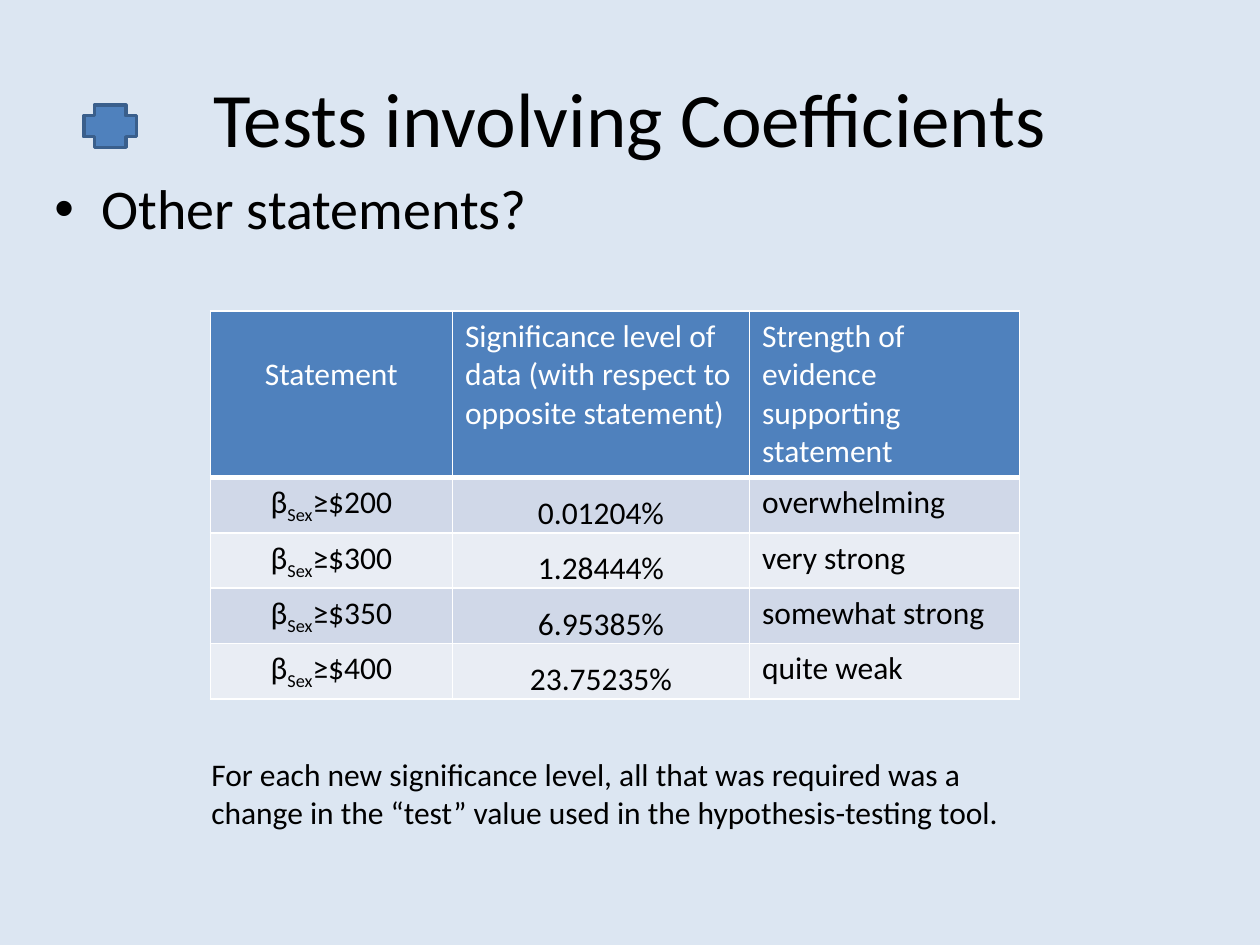
"""Build the slide on tests involving regression coefficients."""
from lxml.etree import SubElement
from pptx import Presentation
from pptx.dml.color import RGBColor
from pptx.enum.shapes import MSO_SHAPE as Shape
from pptx.enum.text import MSO_ANCHOR as Anchor, MSO_AUTO_SIZE as AutoSize, PP_ALIGN as Align
from pptx.oxml.ns import qn
from pptx.util import Cm, Pt

BACKGROUND = RGBColor(0xDC, 0xE6, 0xF2)
BLUE = RGBColor(0x4F, 0x81, 0xBD)
OUTLINE = RGBColor(0x3A, 0x5F, 0x8C)
BANDS = RGBColor(0xD0, 0xD8, 0xE8), RGBColor(0xE9, 0xED, 0xF4)
WHITE = RGBColor(0xFF, 0xFF, 0xFF)
BLACK = RGBColor(0, 0, 0)

HEADINGS = (
    "Statement",
    "Significance level of data (with respect to opposite statement)",
    "Strength of evidence supporting statement",
)
FINDINGS = (
    ("≥$200", "0.01204%", "overwhelming"),
    ("≥$300", "1.28444%", "very strong"),
    ("≥$350", "6.95385%", "somewhat strong"),
    ("≥$400", "23.75235%", "quite weak"),
)


def style_text(paragraph, size, color=BLACK, align=None):
    font = paragraph.font
    font.name, font.size, font.bold = "Calibri", Pt(size), False
    font.color.rgb = color
    paragraph.alignment = align


def style_cell(cell, fill, width=1, header_width=1):
    properties = cell._tc.get_or_add_tcPr()
    for side in ("lnL", "lnR", "lnT", "lnB"):
        points = header_width if side == "lnB" else width
        border = SubElement(properties, qn(f"a:{side}"), w=str(Pt(points)))
        SubElement(SubElement(border, qn("a:solidFill")), qn("a:srgbClr"), val=str(WHITE))
    cell.fill.solid()
    cell.fill.fore_color.rgb = fill


prs = Presentation()
prs.slide_width, prs.slide_height = Cm(25.4), Cm(19.05)
slide = prs.slides.add_slide(prs.slide_layouts[1])
slide.background.fill.solid()
slide.background.fill.fore_color.rgb = BACKGROUND

title, question = slide.placeholders
title.left, title.top, title.width, title.height = Cm(1.27), Cm(0.76), Cm(22.86), Cm(3.18)
title.text_frame.text = "Tests involving Coefficients"
style_text(title.text_frame.paragraphs[0], 44, align=Align.CENTER)

question.left, question.top, question.width, question.height = Cm(0.84), Cm(3.38), Cm(23.7), Cm(12.57)
question.text_frame.text = "Other statements?"
style_text(question.text_frame.paragraphs[0], 32)

results = slide.shapes.add_table(5, 3, Cm(4.24), Cm(6.27), Cm(16.31), Cm(6.98)).table
for column, width in zip(results.columns, (4.88, 5.99, 5.44)):
    column.width = Cm(width)
for row, height in zip(results.rows, (3.1, 0.97, 0.97, 0.97, 0.97)):
    row.height = Cm(height)

for column, heading in enumerate(HEADINGS):
    cell = results.cell(0, column)
    cell.text = heading
    style_text(cell.text_frame.paragraphs[0], 18, WHITE, None if column else Align.CENTER)
    style_cell(cell, BLUE, header_width=3)
results.cell(0, 0).margin_top = Cm(0.9)

for row, (threshold, significance, strength) in enumerate(FINDINGS, 1):
    statement_cell, significance_cell, strength_cell = results.rows[row].cells
    statement = statement_cell.text_frame.paragraphs[0]
    for part in ("β", "Sex", threshold):
        run = statement.add_run()
        run.text = part
        if part == "Sex":
            run.font._element.set("baseline", "-25000")
    significance_cell.text = significance
    significance_cell.vertical_anchor = Anchor.BOTTOM
    significance_cell.margin_left = significance_cell.margin_right = Cm(0.03)
    significance_cell.margin_top, significance_cell.margin_bottom = Cm(0.03), 0
    strength_cell.text = strength
    for cell, align in zip(results.rows[row].cells, (Align.CENTER, Align.CENTER, None)):
        style_text(cell.text_frame.paragraphs[0], 18, align=align)
        style_cell(cell, BANDS[(row - 1) % 2])

remark = slide.shapes.add_textbox(Cm(4.01), Cm(15.09), Cm(16.71), Cm(1.8)).text_frame
remark.word_wrap = True
remark.auto_size = AutoSize.SHAPE_TO_FIT_TEXT
remark.text = (
    "For each new significance level, all that was required was a change in "
    "the “test” value used in the hypothesis-testing tool."
)
style_text(remark.paragraphs[0], 18)

plus = slide.shapes.add_shape(Shape.CROSS, Cm(1.69), Cm(2.12), Cm(1.06), Cm(0.85))
plus.shadow.inherit = False
plus.fill.solid()
plus.fill.fore_color.rgb = BLUE
plus.line.color.rgb = OUTLINE
plus.line.width = Pt(2)

prs.save("out.pptx")
